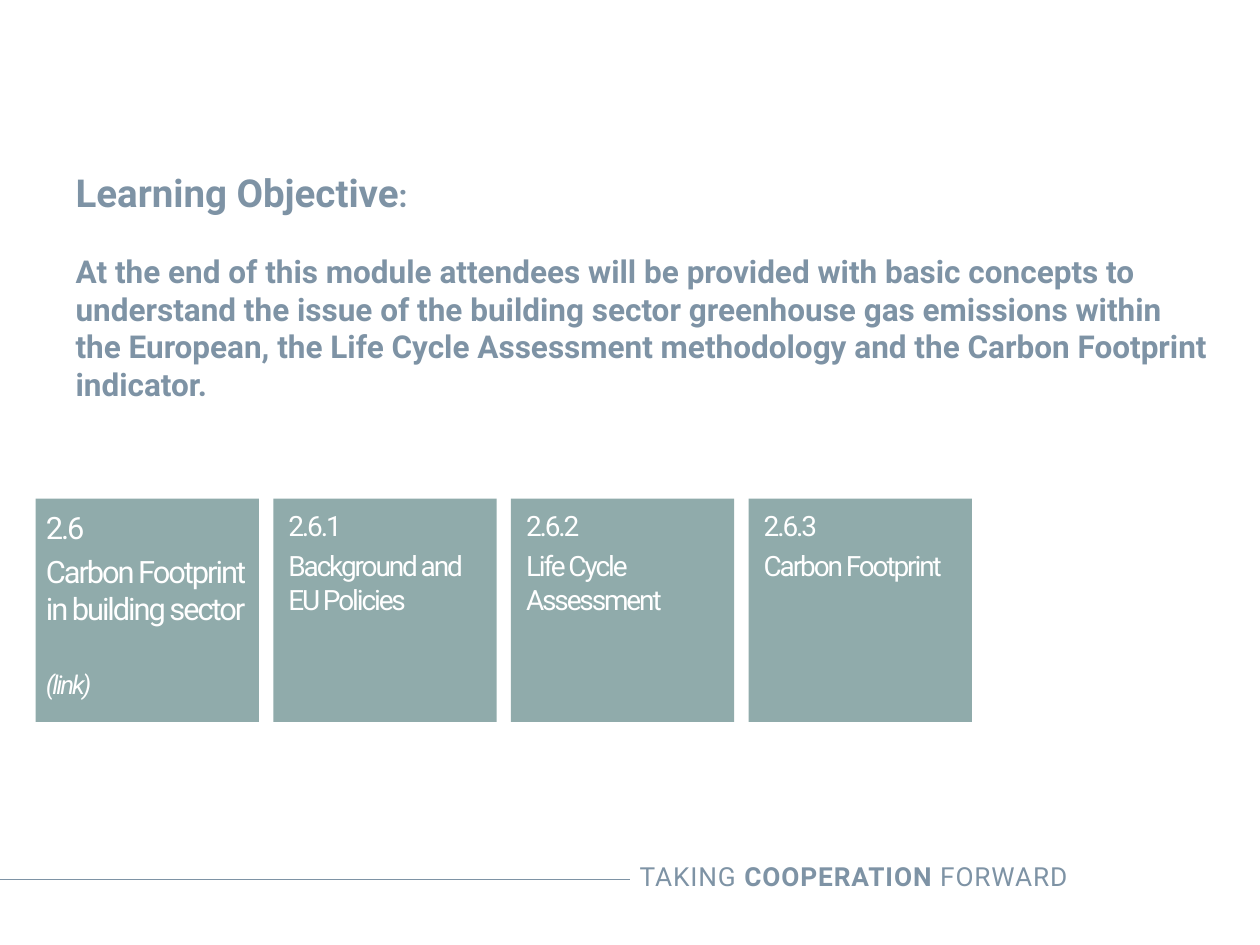
from dataclasses import dataclass

from pptx import Presentation
from pptx.dml.color import RGBColor
from pptx.enum.shapes import MSO_CONNECTOR as Connector, MSO_SHAPE as Shape
from pptx.enum.text import MSO_ANCHOR as Anchor, PP_ALIGN as Align
from pptx.oxml.ns import qn
from pptx.slide import Slide
from pptx.text.text import TextFrame, _Paragraph as Paragraph
from pptx.util import Pt


@dataclass(frozen=True)
class Theme:
    font: str = "Roboto"
    slate: RGBColor = RGBColor(0x7E, 0x93, 0xA5)
    sage: RGBColor = RGBColor(0x90, 0xAB, 0xAB)
    white: RGBColor = RGBColor(0xFF, 0xFF, 0xFF)
    heading: float = 22
    body: float = 18
    module: float = 17.6
    unit: float = 16
    footer: float = 15
    link: float = 14.8


@dataclass(frozen=True)
class Card:
    number: str
    title: str
    size: float
    insets: tuple[float, float, float, float]
    link: str = ""


THEME = Theme()
UNIT_INSETS = (8.6, 5.8, 8.6, 8.6)
CARDS = [
    Card("2.6", "Carbon Footprint in building sector", THEME.module,
         (5.8, 5.8, 0, 8.6), "(link)"),
    Card("2.6.1", "Background and EU Policies", THEME.unit, UNIT_INSETS),
    Card("2.6.2", "Life Cycle Assessment", THEME.unit, UNIT_INSETS),
    Card("2.6.3", "Carbon Footprint", THEME.unit, UNIT_INSETS),
]
CARD_LEFT, CARD_TOP, CARD_SIDE, CARD_PITCH = 20.4, 285, 127.6, 135.8
CARD_SPACING = 0.22  # share of the type size
LINK_GAP = 24


def add_run(paragraph: Paragraph, text: str, size: float, color: RGBColor,
            bold: bool = False, italic: bool = False, tracking: float = 0) -> None:
    run = paragraph.add_run()
    run.text = text
    font = run.font
    font.name, font.size = THEME.font, Pt(size)
    font.bold, font.italic = bold, italic
    font.color.rgb = color
    if tracking:
        run._r.get_or_add_rPr().set("spc", str(round(tracking * 100)))


def set_frame(frame: TextFrame, insets: tuple[float, float, float, float]) -> None:
    frame.word_wrap = True
    frame.vertical_anchor = Anchor.TOP
    (frame.margin_left, frame.margin_top,
     frame.margin_right, frame.margin_bottom) = map(Pt, insets)


def add_objective(slide: Slide) -> None:
    box = slide.shapes.add_textbox(Pt(37.4), Pt(93.6), Pt(658.8), Pt(159.8))
    frame = box.text_frame
    set_frame(frame, (5.8, 2.9, 5.8, 2.9))
    heading = frame.paragraphs[0]
    add_run(heading, "Learning Objective", THEME.heading, THEME.slate, bold=True)
    add_run(heading, ":", THEME.body, THEME.slate, bold=True)
    statement = frame.add_paragraph()
    statement.space_before = Pt(21)
    add_run(statement,
            "At the end of this module attendees will be provided with basic "
            "concepts to understand the issue of the building sector greenhouse "
            "gas emissions within the European, the Life Cycle Assessment "
            "methodology and the Carbon Footprint indicator.",
            THEME.body, THEME.slate, bold=True)


def add_card(slide: Slide, card: Card, left: float) -> None:
    shape = slide.shapes.add_shape(
        Shape.RECTANGLE, Pt(left), Pt(CARD_TOP), Pt(CARD_SIDE), Pt(CARD_SIDE))
    shape.shadow.inherit = False
    shape.fill.solid()
    shape.fill.fore_color.rgb = THEME.sage
    shape.line.fill.background()
    frame = shape.text_frame
    set_frame(frame, card.insets)

    number = frame.paragraphs[0]
    title = frame.add_paragraph()
    title.space_before = Pt(card.size * CARD_SPACING)
    for paragraph, text in ((number, card.number), (title, card.title)):
        paragraph.alignment = Align.LEFT
        add_run(paragraph, text, card.size, THEME.white, tracking=-1.2)
    if card.link:
        link = frame.add_paragraph()
        link.alignment = Align.LEFT
        link.space_before = Pt(LINK_GAP)
        add_run(link, card.link, THEME.link, THEME.white, italic=True, tracking=-1.2)


def add_footer(slide: Slide) -> None:
    rule = slide.shapes.add_connector(
        Connector.STRAIGHT, Pt(-0.7), Pt(502.6), Pt(360), Pt(502.6))
    rule.line.color.rgb = THEME.slate
    rule.line.width = Pt(0.75)
    properties = rule._element.spPr
    properties.append(properties.makeelement(qn("a:effectLst"), {}))

    box = slide.shapes.add_textbox(Pt(279.4), Pt(488.2), Pt(337.7), Pt(25.2))
    set_frame(box.text_frame, (7.2, 3.6, 7.2, 3.6))
    motto = box.text_frame.paragraphs[0]
    motto.alignment = Align.RIGHT
    for text, bold in (("TAKING ", False), ("COOPERATION", True), (" FORWARD", False)):
        add_run(motto, text, THEME.footer, THEME.slate, bold=bold, tracking=0.5)


def main() -> None:
    presentation = Presentation()
    presentation.slide_width, presentation.slide_height = Pt(720), Pt(540)
    slide = presentation.slides.add_slide(presentation.slide_layouts[6])

    # Footer rule and motto
    add_footer(slide)
    # Row of module cards
    for index, card in enumerate(CARDS):
        add_card(slide, card, CARD_LEFT + index * CARD_PITCH)
    # Learning objective
    add_objective(slide)

    presentation.save("out.pptx")


if __name__ == "__main__":
    main()
